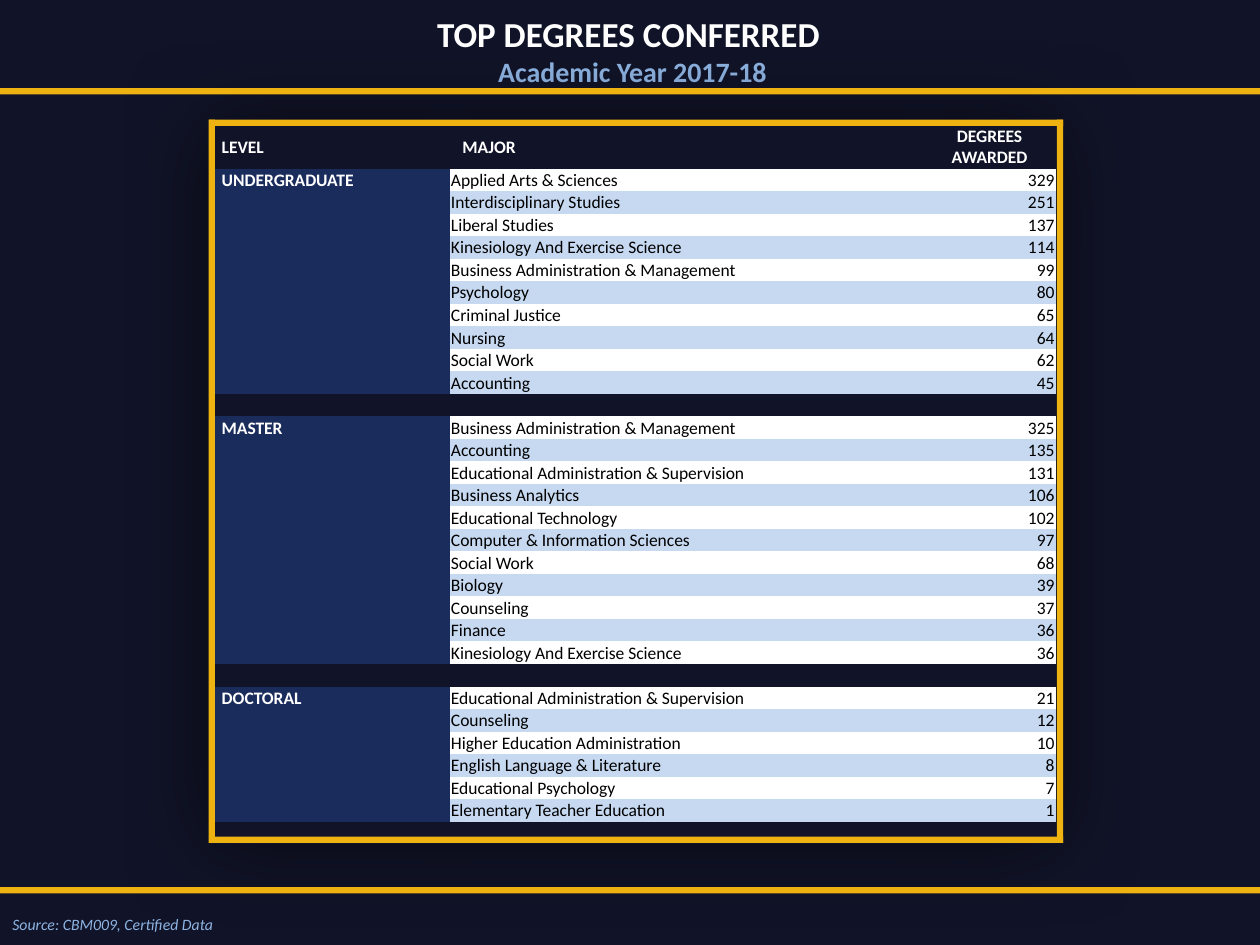
import lxml.etree
import pptx
import pptx.dml.color
import pptx.enum.shapes
import pptx.enum.text
import pptx.oxml
import pptx.oxml.ns
import pptx.util

Pt = pptx.util.Pt
ALIGN = pptx.enum.text.PP_ALIGN
ANCHOR = pptx.enum.text.MSO_ANCHOR
COLORS = {
    "night": "111428",
    "navy": "1A2C5C",
    "gold": "EEB211",
    "sky": "8EB4E3",
    "band": "C6D9F1",
    "white": "FFFFFF",
    "black": "000000",
}
WIDE_INSET = {"margin_left": Pt(7.2), "margin_top": Pt(0.72), "margin_right": 0, "margin_bottom": 0}
TIGHT_INSET = {**WIDE_INSET, "margin_left": Pt(0.72), "margin_right": Pt(0.72)}
HEADING = {"size": Pt(10), "bold": True}
ENTRY = {"size": Pt(10), "bold": False}
NO_STYLE = "{2D5ABB26-0587-4C30-8999-92F81FD0307C}"
SHADOW = (
    '<a:effectLst xmlns:a="http://schemas.openxmlformats.org/drawingml/2006/main">'
    '<a:outerShdw blurRad="635000" algn="ctr" rotWithShape="0">'
    '<a:srgbClr val="000000"><a:alpha val="60000"/></a:srgbClr>'
    "</a:outerShdw></a:effectLst>"
)
DEGREES = {
    "UNDERGRADUATE": [
        ("Applied Arts & Sciences", 329),
        ("Interdisciplinary Studies", 251),
        ("Liberal Studies", 137),
        ("Kinesiology And Exercise Science", 114),
        ("Business Administration & Management", 99),
        ("Psychology", 80),
        ("Criminal Justice", 65),
        ("Nursing", 64),
        ("Social Work", 62),
        ("Accounting", 45),
    ],
    "MASTER": [
        ("Business Administration & Management", 325),
        ("Accounting", 135),
        ("Educational Administration & Supervision", 131),
        ("Business Analytics", 106),
        ("Educational Technology", 102),
        ("Computer & Information Sciences", 97),
        ("Social Work", 68),
        ("Biology", 39),
        ("Counseling", 37),
        ("Finance", 36),
        ("Kinesiology And Exercise Science", 36),
    ],
    "DOCTORAL": [
        ("Educational Administration & Supervision", 21),
        ("Counseling", 12),
        ("Higher Education Administration", 10),
        ("English Language & Literature", 8),
        ("Educational Psychology", 7),
        ("Elementary Teacher Education", 1),
    ],
}


def apply_format(target, values):
    for name, value in values.items():
        setattr(target, name, value)


def paint(fill, color):
    fill.solid()
    fill.fore_color.rgb = pptx.dml.color.RGBColor.from_string(COLORS[color])


def write(para, text, color, font, align=ALIGN.LEFT):
    para.alignment = align
    span = para.add_run()
    span.text = text
    apply_format(span.font, {"name": "Calibri", **font})
    paint(span.font.fill, color)


def add_bar(page, left, top, width, height):
    bar = page.shapes.add_shape(
        pptx.enum.shapes.MSO_SHAPE.RECTANGLE, Pt(left), Pt(top), Pt(width), Pt(height))
    bar.shadow.inherit = False
    paint(bar.fill, "gold")
    bar.line.fill.background()


def add_title(page):
    box = page.shapes.title
    apply_format(box, {"left": Pt(125.3), "top": Pt(3.6), "width": Pt(472.3), "height": Pt(92.2)})
    frame = box.text_frame
    apply_format(frame, {"word_wrap": True, "vertical_anchor": ANCHOR.TOP,
                         "auto_size": pptx.enum.text.MSO_AUTO_SIZE.NONE})
    write(frame.paragraphs[0], "TOP DEGREES CONFERRED ", "white",
          {"size": Pt(20), "bold": True}, ALIGN.CENTER)
    write(frame.add_paragraph(), "Academic Year 2017-18", "sky",
          {"size": Pt(16), "bold": True}, ALIGN.CENTER)


def add_source(page):
    box = page.shapes.add_textbox(Pt(0), Pt(519.1), Pt(133.9), Pt(18))
    box.text_frame.word_wrap = True
    write(box.text_frame.paragraphs[0], "Source: CBM009, Certified Data", "sky",
          {"size": Pt(9), "italic": True})


def fill_cell(cell, text, fill, color="white", font=HEADING, align=ALIGN.LEFT, inset=WIDE_INSET):
    paint(cell.fill, fill)
    apply_format(cell, {"vertical_anchor": ANCHOR.MIDDLE, **inset})
    para = cell.text_frame.paragraphs[0]
    if text:
        write(para, text, color, font, align)
    else:
        lxml.etree.SubElement(para._p, pptx.oxml.ns.qn("a:endParaRPr"), sz="1000")


def add_degree_table(page):
    row_count = 1 + sum(len(majors) + 1 for majors in DEGREES.values())
    shape = page.shapes.add_table(row_count, 3, Pt(119.5), Pt(71.3), Pt(483.8), Pt(411.1))
    table = shape.table
    apply_format(table, {"first_row": False, "horz_banding": False})
    properties = table._tbl.tblPr
    properties.find(pptx.oxml.ns.qn("a:tableStyleId")).text = NO_STYLE
    properties.insert(0, pptx.oxml.parse_xml(SHADOW))
    for column, width in zip(table.columns, (137.5, 270.7, 75.6)):
        column.width = Pt(width)
    for row in table.rows:
        row.height = Pt(12.86)
    table.rows[0].height = Pt(24.9)

    rows = iter(table.rows)
    level_cell, major_cell, count_cell = next(rows).cells
    fill_cell(level_cell, "LEVEL", "night")
    fill_cell(major_cell, "MAJOR", "night")
    fill_cell(count_cell, "DEGREES AWARDED", "night", align=ALIGN.CENTER, inset=TIGHT_INSET)
    for level, majors in DEGREES.items():
        for index, (major, count) in enumerate(majors):
            level_cell, major_cell, count_cell = next(rows).cells
            band = "band" if index % 2 else "white"
            fill_cell(level_cell, "" if index else level, "navy")
            fill_cell(major_cell, major, band, "black", ENTRY, inset=TIGHT_INSET)
            fill_cell(count_cell, str(count), band, "black", ENTRY, ALIGN.RIGHT, TIGHT_INSET)
        for cell in next(rows).cells:
            fill_cell(cell, "", "night")


def main():
    deck = pptx.Presentation()
    apply_format(deck, {"slide_width": Pt(720), "slide_height": Pt(540)})
    page = deck.slides.add_slide(deck.slide_layouts[5])
    paint(page.background.fill, "night")
    add_title(page)
    add_degree_table(page)
    add_source(page)
    for top in (50.4, 506.9):
        add_bar(page, 0, top, 720, 3.6)
    for top in (68.4, 478.1):
        add_bar(page, 119.5, top, 488, 3.6)
    for left in (119.2, 603.9):
        add_bar(page, left, 68.4, 3.6, 413.3)
    deck.save("out.pptx")


if __name__ == "__main__":
    main()
